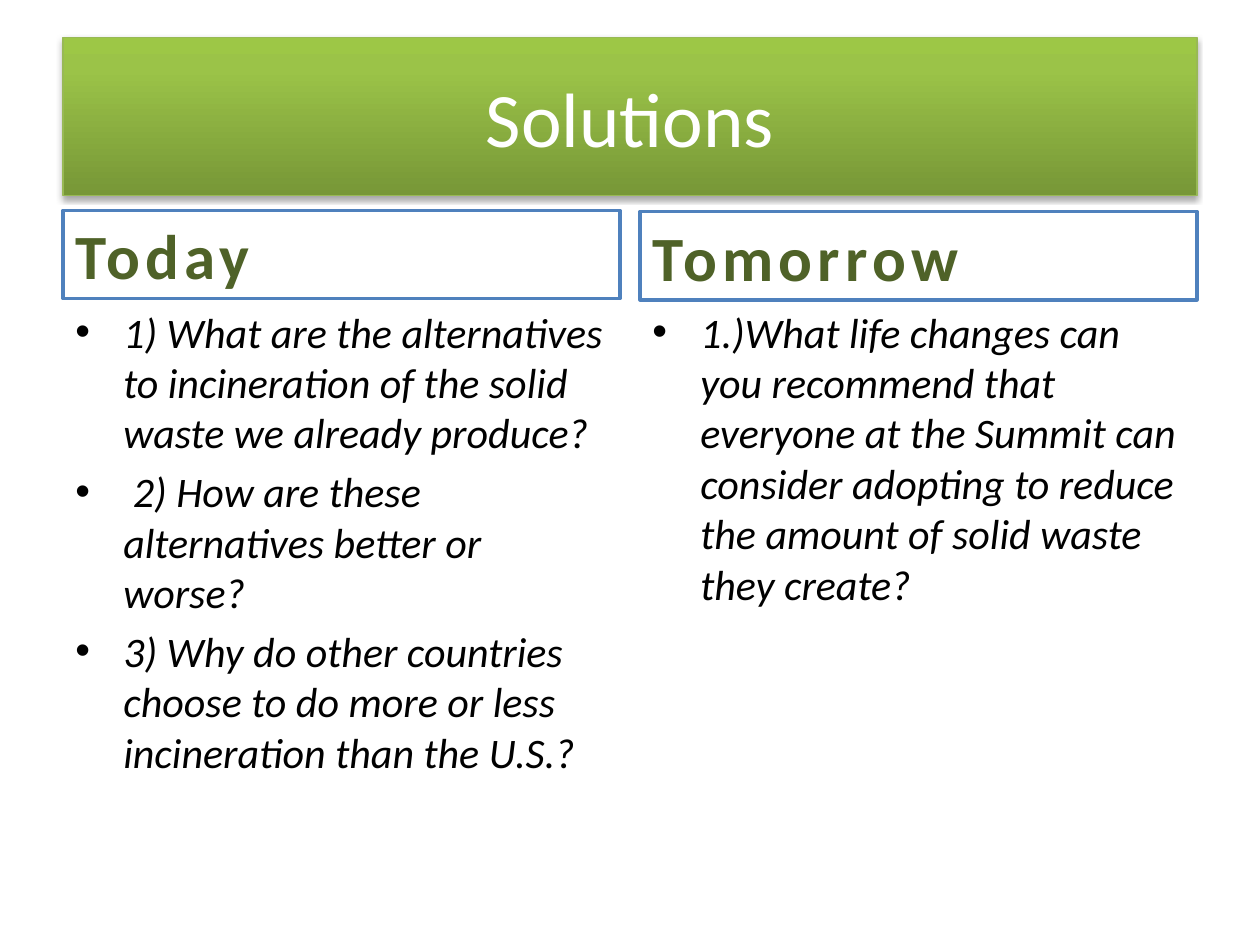
import pptx
import pptx.dml.color
import pptx.enum.shapes
import pptx.enum.text
import pptx.oxml
import pptx.oxml.ns
import pptx.util

Inches, Pt = pptx.util.Inches, pptx.util.Pt
RGBColor = pptx.dml.color.RGBColor
PP_ALIGN, MSO_ANCHOR = pptx.enum.text.PP_ALIGN, pptx.enum.text.MSO_ANCHOR

WHITE = RGBColor(0xFF, 0xFF, 0xFF)
BLACK = RGBColor(0, 0, 0)
BLUE = RGBColor(0x4F, 0x81, 0xBD)
DARK_GREEN = RGBColor(0x4F, 0x62, 0x28)
EDGE_GREEN = RGBColor(0x98, 0xB9, 0x55)
TEXT_OUTLINE = RGBColor(0xF4, 0xF6, 0xF9)
TEXT_SHADOW = RGBColor(0xB8, 0xD4, 0xF0)
BANNER_STOPS = [
    (0, RGBColor(0x77, 0x97, 0x37)),
    (80, RGBColor(0x9B, 0xC3, 0x48)),
    (100, RGBColor(0x9D, 0xC7, 0x46)),
]

MARGIN = 0.5
COLUMN_W = 4.42
COLUMNS = [
    (MARGIN, 1.67, "Today", [
        "1) What are the alternatives to incineration of the solid waste we already produce?",
        " 2) How are these alternatives better or worse?",
        "3) Why do other countries choose to do more or less incineration than the U.S.?",
    ]),
    (10 - MARGIN - COLUMN_W, 1.68, "Tomorrow", [
        "1.)What life changes can you recommend that everyone at the Summit can "
        "consider adopting to reduce the amount of solid waste they create?",
    ]),
]


def xml(tag, content, attrs=""):
    ns = pptx.oxml.ns.nsdecls("a")
    return pptx.oxml.parse_xml(f"<a:{tag} {ns} {attrs}>{content}</a:{tag}>")


def shadow_effect(color, alpha, blur, dist):
    """Effect list with one shadow falling straight down; lengths in points."""
    return xml("effectLst", (
        f'<a:outerShdw blurRad="{Pt(blur)}" dist="{Pt(dist)}" dir="5400000" rotWithShape="0">'
        f'<a:srgbClr val="{color}"><a:alpha val="{alpha * 1000}"/></a:srgbClr></a:outerShdw>'))


def set_font(p, size, color, bold=False, italic=False):
    p.font.name = "Calibri"
    p.font.size = Pt(size)
    p.font.color.rgb = color
    p.font.bold = bold
    p.font.italic = italic


def add_box(slide, left, top, width, height, line_color, line_width):
    s = slide.shapes.add_shape(
        pptx.enum.shapes.MSO_SHAPE.RECTANGLE,
        Inches(left), Inches(top), Inches(width), Inches(height))
    s.shadow.inherit = False
    s.fill.solid()
    s.fill.fore_color.rgb = WHITE
    s.line.color.rgb = line_color
    s.line.width = Pt(line_width)
    return s


def add_banner(slide, text):
    s = add_box(slide, MARGIN, 0.3, 10 - 2 * MARGIN, 1.25, EDGE_GREEN, 0.75)
    stops = "".join(f'<a:gs pos="{pos * 1000}"><a:srgbClr val="{color}"/></a:gs>'
                    for pos, color in BANNER_STOPS)
    sp_pr = s._element.spPr
    sp_pr.replace(sp_pr.find(pptx.oxml.ns.qn("a:solidFill")), xml(
        "gradFill", f'<a:gsLst>{stops}</a:gsLst><a:lin ang="16200000" scaled="0"/>',
        'rotWithShape="1"'))
    sp_pr.replace(sp_pr.find(pptx.oxml.ns.qn("a:effectLst")),
                  shadow_effect(BLACK, 35, 3.1, 1.8))
    s.text_frame.vertical_anchor = MSO_ANCHOR.MIDDLE
    p = s.text_frame.paragraphs[0]
    p.text = text
    p.alignment = PP_ALIGN.CENTER
    set_font(p, 44, WHITE)


def add_heading(slide, left, top, text):
    s = add_box(slide, left, top, COLUMN_W, 0.7, BLUE, 2)
    s.text_frame.vertical_anchor = MSO_ANCHOR.BOTTOM
    p = s.text_frame.paragraphs[0]
    p.alignment = PP_ALIGN.LEFT
    p.space_before = Pt(7.2)
    set_font(p, 36, DARK_GREEN, bold=True)
    r = p.add_run()
    r.text = text
    r_pr = r.font._element
    r_pr.set("spc", "300")
    r_pr.append(xml("ln", f'<a:solidFill><a:srgbClr val="{TEXT_OUTLINE}"/></a:solidFill>',
                    f'w="{Pt(0.9)}"'))
    r.font.color.rgb = DARK_GREEN
    r_pr.append(shadow_effect(TEXT_SHADOW, 100, 2, 1.5))


def add_bullets(slide, left, items):
    s = slide.shapes.add_textbox(Inches(left), Inches(2.38), Inches(COLUMN_W), Inches(4.32))
    tf = s.text_frame
    tf.word_wrap = True
    for i, item in enumerate(items):
        p = tf.add_paragraph() if i else tf.paragraphs[0]
        p.text = item
        p.space_before = Pt(4.8)
        set_font(p, 24, BLACK, italic=True)
        p_pr = p._p.get_or_add_pPr()
        p_pr.set("marL", str(Inches(0.38)))
        p_pr.set("indent", str(-Inches(0.38)))
        bullet_at = p_pr.index(p_pr.find(pptx.oxml.ns.qn("a:defRPr")))
        p_pr.insert(bullet_at, xml("buFont", "", 'typeface="Arial"'))
        p_pr.insert(bullet_at + 1, xml("buChar", "", 'char="•"'))


def main():
    prs = pptx.Presentation()
    prs.slide_width, prs.slide_height = Inches(10), Inches(7.5)
    slide = prs.slides.add_slide(prs.slide_layouts[6])
    add_banner(slide, "Solutions")
    for left, top, heading, items in COLUMNS:
        add_heading(slide, left, top, heading)
        add_bullets(slide, left, items)
    prs.save("out.pptx")


if __name__ == "__main__":
    main()
